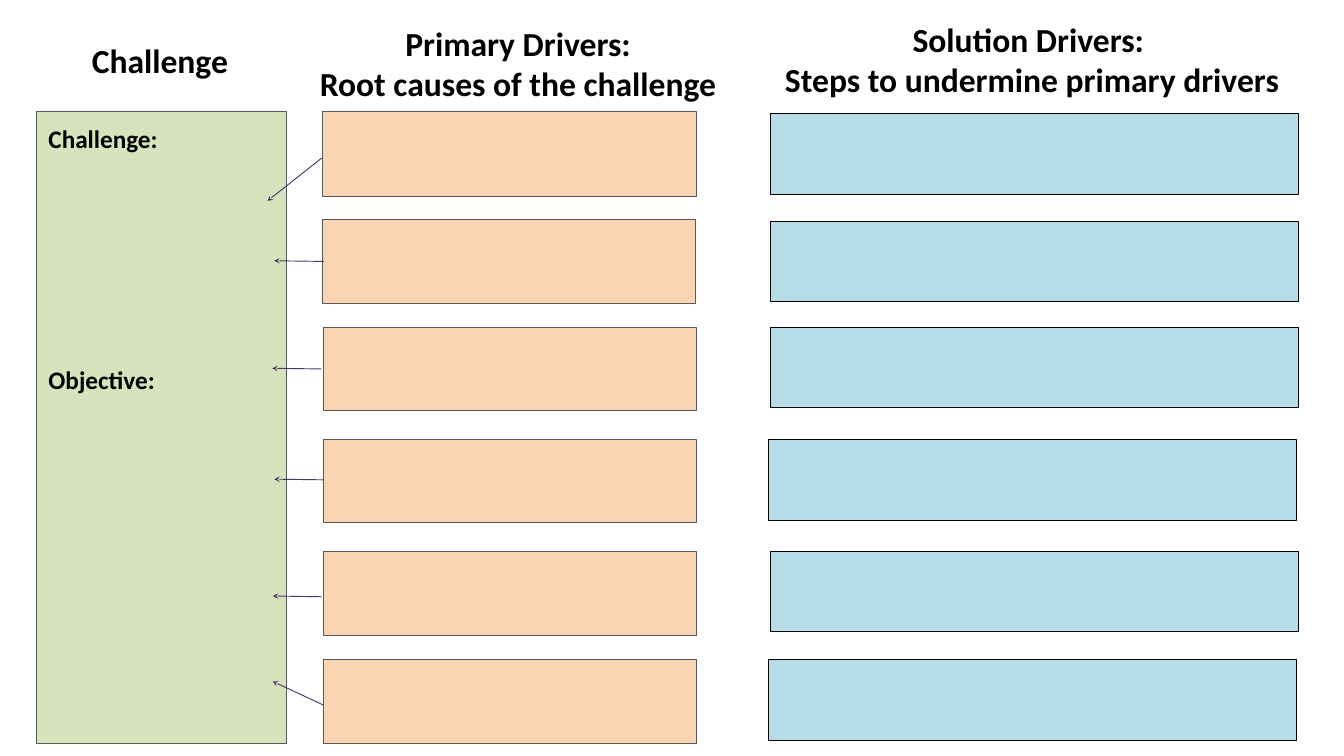
"""Builds a driver diagram linking a challenge, its root causes and solution steps."""
from lxml.etree import SubElement
from pptx import Presentation
from pptx.dml.color import RGBColor
from pptx.enum.shapes import MSO_CONNECTOR, MSO_SHAPE
from pptx.enum.text import MSO_ANCHOR, PP_ALIGN
from pptx.oxml.ns import qn
from pptx.util import Pt

COLORS = {
    "challenge": "D6E3BC",
    "primary": "FBD4B4",
    "solution": "B6DDE7",
    "gray": "595959",
    "black": "000000",
    "arrow": "4D3769",
}

HEADINGS = [
    ("Challenge", 36, 30.2, 270.7),
    ("Primary Drivers:\nRoot causes of the challenge", 293.8, 11.5, 522.7),
    ("Solution Drivers: \vSteps to undermine primary drivers", 820.1, 7.2, 571.7),
]

PRIMARY_DRIVERS = [
    (345.6, 118.8, 91.4),
    (344.9, 235.4, 89.3),
    (346.3, 350.6, 89.3),
    (346.3, 470.9, 89.3),
    (346.3, 591.1, 89.3),
    (346.3, 707, 89.3),
]

SOLUTION_DRIVERS = [
    (825.1, 121.7),
    (825.1, 236.9),
    (825.1, 350.6),
    (823, 470.9),
    (825.1, 590.4),
    (823, 707),
]

CAUSE_ARROWS = [
    (344.9, 169.2, 286.6, 215.3),
    (347, 280.1, 293.8, 279.4),
    (344.2, 395.3, 291.6, 394.6),
    (347, 514.1, 293.8, 513.4),
    (344.9, 639.4, 292.3, 638.6),
    (346.3, 755.3, 292.3, 730.1),
]


def write(frame, text, *, size, align=PP_ALIGN.LEFT, gap=0):
    """Fill a text frame, with the given gap between its paragraphs."""
    frame.word_wrap = True
    frame.vertical_anchor = MSO_ANCHOR.TOP
    frame.margin_left = frame.margin_right = Pt(13)
    frame.margin_top = frame.margin_bottom = Pt(13)
    frame.text = text
    for index, paragraph in enumerate(frame.paragraphs):
        paragraph.alignment = align
        if index:
            paragraph.space_before = Pt(gap)
        for run in paragraph.runs:
            run.font.name = "Calibri"
            run.font.size = Pt(size)
            run.font.bold = True
            run.font.color.rgb = RGBColor.from_string(COLORS["black"])


class DriverDiagram:
    """Holds the style and the slide, and draws each kind of element."""

    heading_size = 36
    body_size = 27
    border = 0.75
    arrow_width = 1

    def __init__(self, slide):
        self.slide = slide

    def heading(self, text, left, top, width):
        """Add a centred column heading."""
        box = self.slide.shapes.add_textbox(Pt(left), Pt(top), Pt(width), Pt(67))
        write(box.text_frame, text, size=self.heading_size, align=PP_ALIGN.CENTER)

    def box(self, left, top, width, height, fill, line):
        """Add a filled, outlined rectangle."""
        box = self.slide.shapes.add_shape(
            MSO_SHAPE.RECTANGLE, Pt(left), Pt(top), Pt(width), Pt(height))
        box.shadow.inherit = False
        box.fill.solid()
        box.fill.fore_color.rgb = RGBColor.from_string(COLORS[fill])
        box.line.color.rgb = RGBColor.from_string(COLORS[line])
        box.line.width = Pt(self.border)
        return box

    def arrow(self, *ends):
        """Add an arrow from the first point to the second."""
        arrow = self.slide.shapes.add_connector(
            MSO_CONNECTOR.STRAIGHT, *(Pt(end) for end in ends))
        arrow.line.color.rgb = RGBColor.from_string(COLORS["arrow"])
        arrow.line.width = Pt(self.arrow_width)
        SubElement(arrow.line._get_or_add_ln(), qn("a:tailEnd"), type="stealth")
        SubElement(arrow._element.spPr, qn("a:effectLst"))


def main():
    """Build and save the slide."""
    deck = Presentation()
    deck.slide_width, deck.slide_height = Pt(1440), Pt(810)
    diagram = DriverDiagram(deck.slides.add_slide(deck.slide_layouts[6]))

    challenge = diagram.box(38.9, 118.8, 267.8, 678.2, "challenge", "gray")
    write(challenge.text_frame, "Challenge:\nObjective:",
          size=diagram.body_size, gap=226)
    for heading in HEADINGS:
        diagram.heading(*heading)
    for left, top, height in PRIMARY_DRIVERS:
        diagram.box(left, top, 400.3, height, "primary", "gray")
    for left, top in SOLUTION_DRIVERS:
        diagram.box(left, top, 565.9, 86.4, "solution", "black")
    for ends in CAUSE_ARROWS:
        diagram.arrow(*ends)

    deck.save("out.pptx")


if __name__ == "__main__":
    main()
